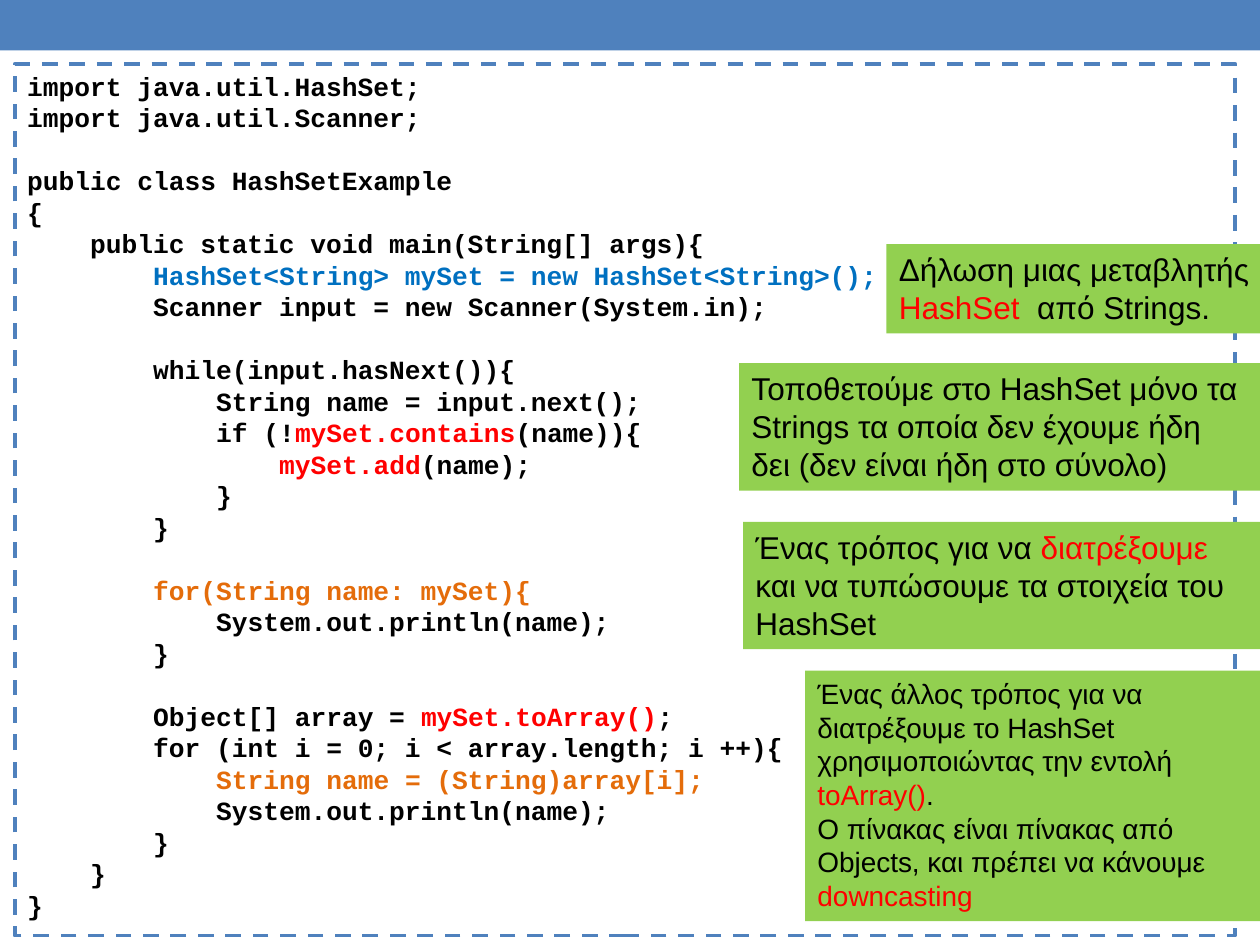
"""Builds a slide with a Java HashSet example and four explanatory callouts."""
from lxml import etree
from pptx import Presentation
from pptx import util as u
from pptx.dml.color import RGBColor
from pptx.enum import dml, shapes, text
from pptx.oxml import ns

BLUE = RGBColor(0x4F, 0x81, 0xBD)
GREEN = RGBColor(0x92, 0xD0, 0x50)
BLACK = RGBColor(0, 0, 0)
RED = RGBColor(0xFF, 0, 0)
SKY = RGBColor(0, 0x70, 0xC0)
ORANGE = RGBColor(0xE4, 0x6C, 0x0A)

deck = Presentation()
deck.slide_width, deck.slide_height = u.Cm(25.4), u.Cm(19.05)
slide = deck.slides.add_slide(deck.slide_layouts[6])


def add_box(left, top, width, height, fill=None):
    box = slide.shapes.add_shape(
        shapes.MSO_SHAPE.RECTANGLE, u.Cm(left), u.Cm(top), u.Cm(width), u.Cm(height))
    box.shadow.inherit = False
    box.line.fill.background()
    if fill is None:
        box.fill.background()
    else:
        box.fill.solid()
        box.fill.fore_color.rgb = fill
    return box


def write_lines(box, lines, font, size, bold=False, tab_stops=()):
    frame = box.text_frame
    frame.word_wrap = True
    frame.vertical_anchor = text.MSO_ANCHOR.TOP
    paragraph, gap = frame.paragraphs[0], 0
    for number, line in enumerate(lines):
        if not line:
            gap = u.Pt(18)
            continue
        if number:
            paragraph = frame.add_paragraph()
        if tab_stops:
            properties = paragraph._p.get_or_add_pPr()
            tabs = etree.SubElement(properties, ns.qn("a:tabLst"))
            for stop in tab_stops:
                etree.SubElement(tabs, ns.qn("a:tab"), pos=str(u.Cm(stop)), algn="l")
        paragraph.alignment = text.PP_ALIGN.LEFT
        if gap:
            paragraph.space_before, gap = gap, 0
        for words, color in line:
            run = paragraph.add_run()
            run.text = words
            run.font.name, run.font.size, run.font.bold = font, u.Pt(size), bold
            run.font.color.rgb = color


add_box(0, 0, 25.4, 1.02, BLUE)

code = [
    [("import java.util.HashSet;", BLACK)],
    [("import java.util.Scanner;", BLACK)],
    [],
    [("public class HashSetExample", BLACK)],
    [("{", BLACK)],
    [("    public static void main(String[] args){", BLACK)],
    [("\t", BLACK), ("HashSet<String> mySet = new HashSet<String>();", SKY)],
    [("\tScanner input = new Scanner(System.in);", BLACK)],
    [],
    [("\twhile(input.hasNext()){", BLACK)],
    [("\t    String name = input.next();", BLACK)],
    [("\t    if (!", BLACK), ("mySet.contains", RED), ("(name)){", BLACK)],
    [("\t\t", BLACK), ("mySet.add", RED), ("(name);", BLACK)],
    [("\t    }", BLACK)],
    [("\t}", BLACK)],
    [],
    [("\t", BLACK), ("for(String name: mySet){", ORANGE)],
    [("\t    System.out.println(name);", BLACK)],
    [("\t}", BLACK)],
    [],
    [("\tObject[] array = ", BLACK), ("mySet.toArray()", RED), (";", BLACK)],
    [("\tfor (int i = 0; i < array.length; i ++){", BLACK)],
    [("\t    ", BLACK), ("String name = (String)array[i];", ORANGE)],
    [("\t    System.out.println(name);", BLACK)],
    [("\t}", BLACK)],
    [("    }", BLACK)],
    [("}", BLACK)],
]
listing = add_box(0.3, 1.29, 24.6, 17.57)
listing.line.color.rgb = BLUE
listing.line.width = u.Pt(2.25)
listing.line.dash_style = dml.MSO_LINE.DASH
write_lines(listing, code, "Courier New", 15, bold=True, tab_stops=(2.54, 5.08))

callouts = [
    (17.87, 4.92, 7.6, 1.8, 18, [
        [("Δήλωση μιας μεταβλητής ", BLACK), ("HashSet  ", RED), ("από Strings.", BLACK)]]),
    (14.9, 7.32, 10.5, 2.57, 18, [
        [("Τοποθετούμε στο HashSet μόνο τα Strings τα οποία δεν έχουμε ήδη δει "
          "(δεν είναι ήδη στο σύνολο)", BLACK)]]),
    (14.98, 10.52, 10.5, 2.57, 18, [
        [("Ένας τρόπος για να ", BLACK), ("διατρέξουμε", RED),
         (" και να τυπώσουμε τα στοιχεία του HashSet", BLACK)]]),
    (16.23, 13.52, 9.17, 5.05, 16, [
        [("Ένας άλλος τρόπος για να διατρέξουμε το HashSet χρησιμοποιώντας την εντολή ", BLACK),
         ("toArray()", RED), (".", BLACK)],
        [("Ο πίνακας είναι πίνακας από Objects, και πρέπει να κάνουμε ", BLACK),
         ("downcasting", RED)]]),
]
for left, top, width, height, size, lines in callouts:
    write_lines(add_box(left, top, width, height, GREEN), lines, "Arial", size)

deck.save("out.pptx")
